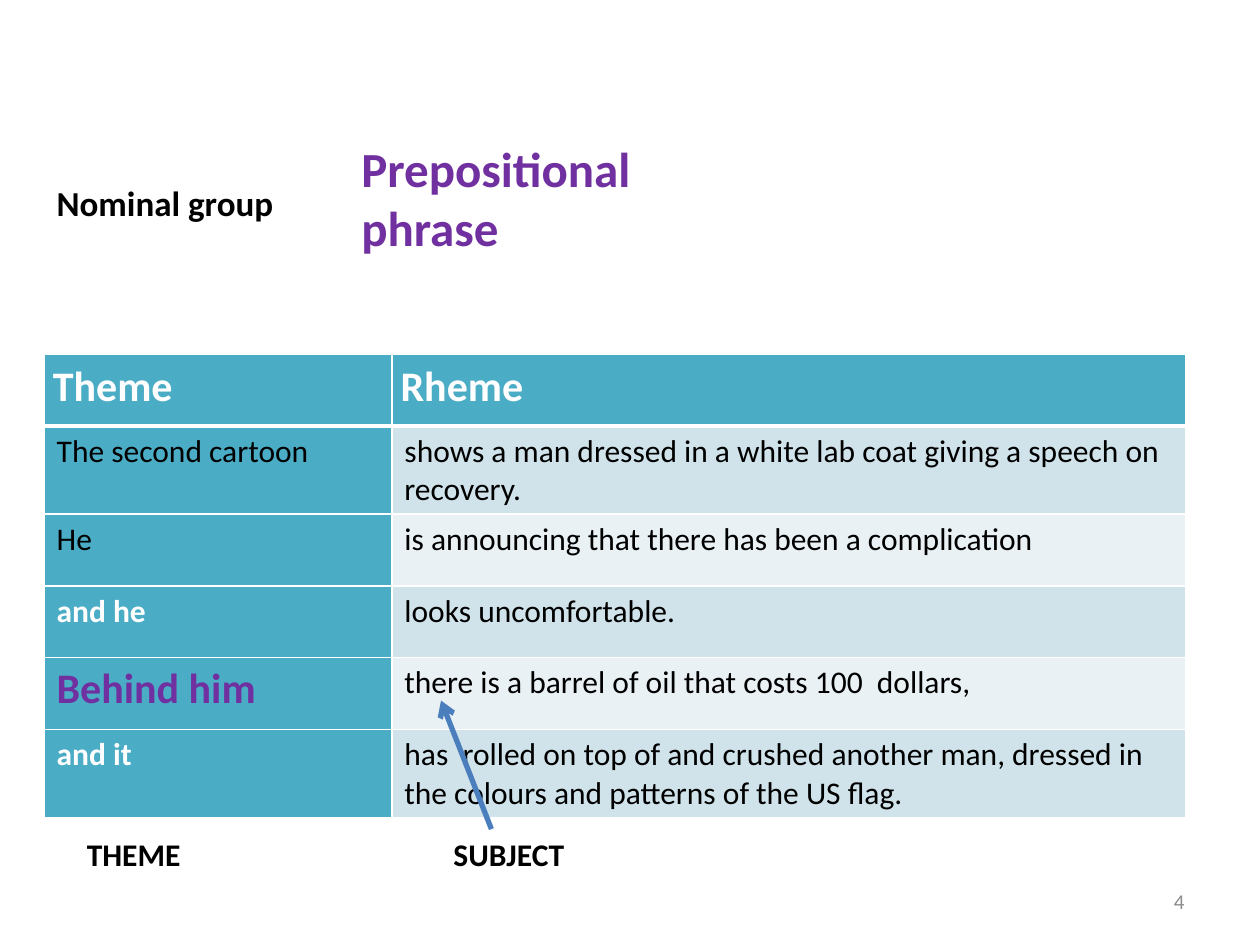
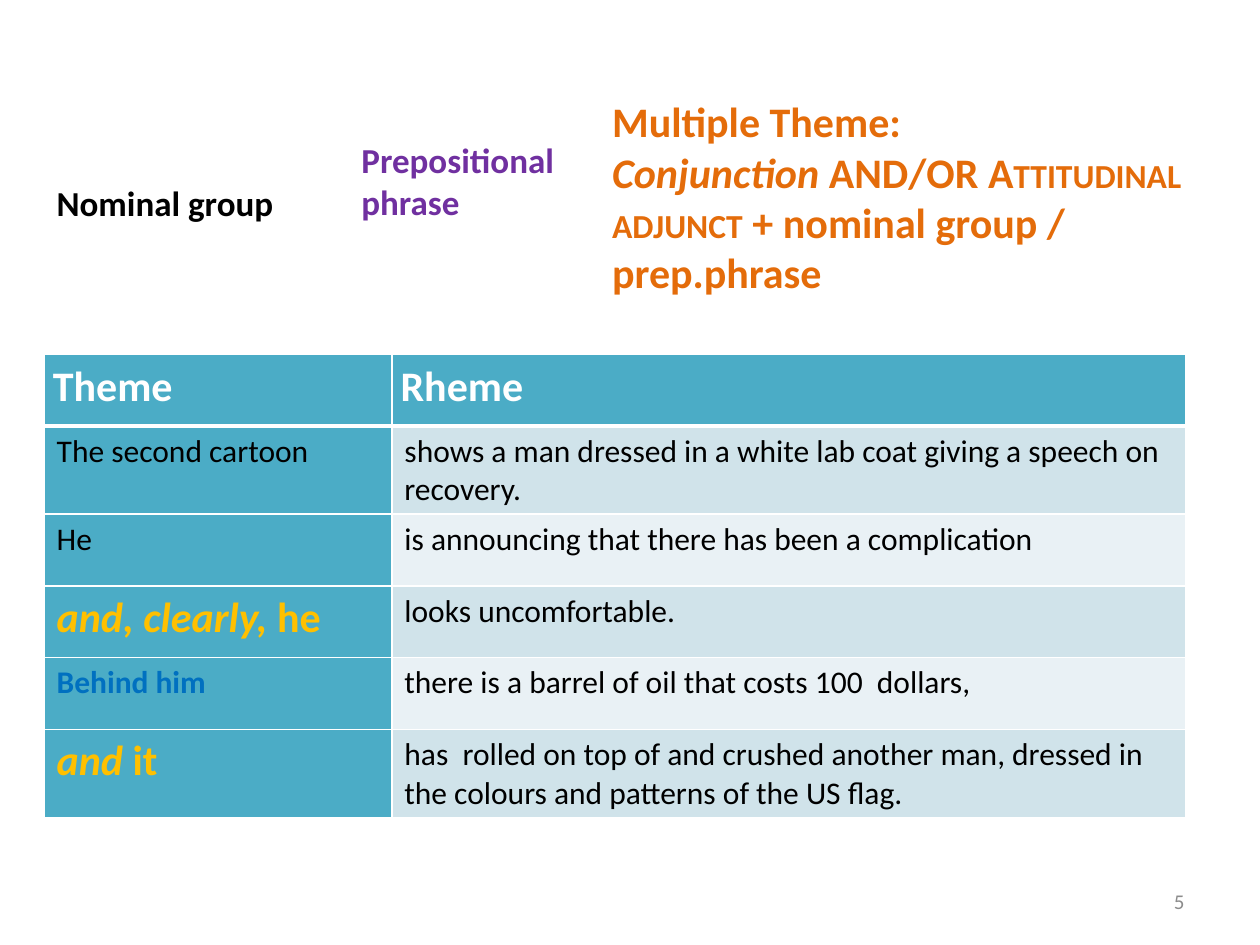
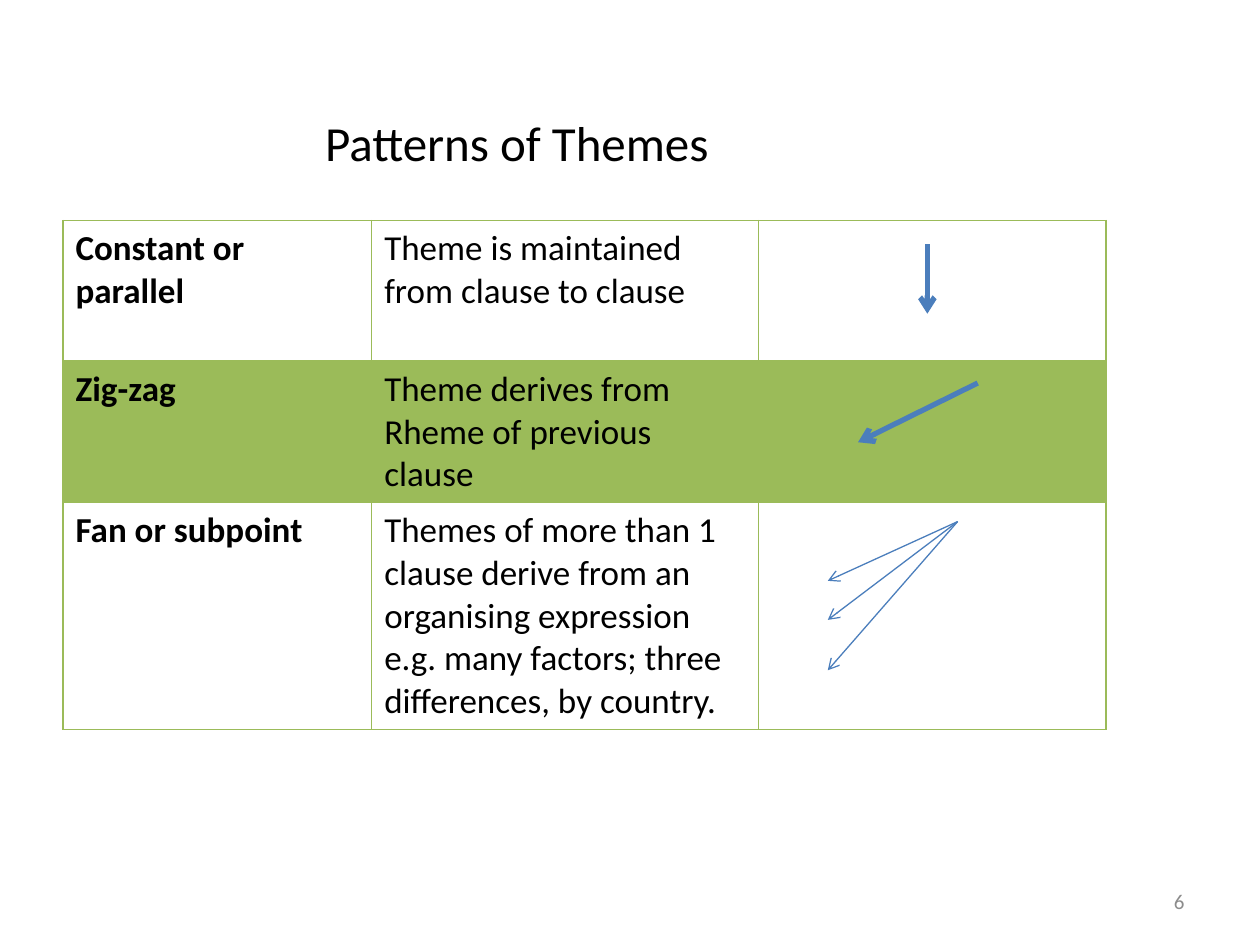
from dataclasses import dataclass
from typing import NamedTuple

from lxml import etree
from pptx import Presentation
from pptx.dml.color import RGBColor
from pptx.enum.shapes import MSO_CONNECTOR
from pptx.enum.text import MSO_ANCHOR, MSO_AUTO_SIZE, PP_ALIGN
from pptx.oxml.ns import qn
from pptx.util import Inches, Pt

LEFT, RIGHT, JUSTIFY = PP_ALIGN.LEFT, PP_ALIGN.RIGHT, PP_ALIGN.JUSTIFY
TOP, MIDDLE = MSO_ANCHOR.TOP, MSO_ANCHOR.MIDDLE
GROW, FIXED = MSO_AUTO_SIZE.SHAPE_TO_FIT_TEXT, MSO_AUTO_SIZE.NONE
STRAIGHT = MSO_CONNECTOR.STRAIGHT
FONT = "Calibri"
TITLE_ONLY, BLANK = 5, 6
COLORS = {
    "black": "000000",
    "white": "FFFFFF",
    "teal": "4BACC6",
    "mist": "D0E3EA",
    "pale": "E9F1F5",
    "green": "9BBB59",
    "purple": "7030A0",
    "orange": "E46C0A",
    "gold": "FFC000",
    "blue": "0070C0",
    "arrow": "4B7EBC",
    "gray": "8C8C8C",
}


class Run(NamedTuple):
    text: str
    italic: bool = False
    caps: bool = False


@dataclass
class Text:
    paras: list[list[Run]]
    size: float = 18
    color: str = "black"
    bold: bool = False
    align: PP_ALIGN = LEFT
    spacing: float | None = None


@dataclass
class Label:
    box: tuple[float, float, float, float]
    text: Text
    anchor: MSO_ANCHOR = TOP
    auto: MSO_AUTO_SIZE = GROW


class Arrow(NamedTuple):
    start: tuple[float, float]
    end: tuple[float, float]
    width: float = 3


def plain(*lines: str, **style) -> Text:
    return Text([[Run(line)] for line in lines], **style)


def rgb(name: str) -> RGBColor:
    return RGBColor.from_string(COLORS[name])


def write(frame, text: Text) -> None:
    for index, runs in enumerate(text.paras):
        para = frame.add_paragraph() if index else frame.paragraphs[0]
        para.alignment = text.align
        if text.spacing:
            para.line_spacing = text.spacing
        font = para.font
        font.name, font.size, font.bold = FONT, Pt(text.size), text.bold
        font.color.rgb = rgb(text.color)
        for part in runs:
            run = para.add_run()
            run.text = part.text
            if len(runs) > 1:
                run.font.italic = part.italic
            if part.caps:
                run.font._element.set("cap", "small")


def fit(shape, label: Label) -> None:
    shape.left, shape.top, shape.width, shape.height = map(Inches, label.box)
    frame = shape.text_frame
    frame.word_wrap = True
    frame.auto_size = label.auto
    frame.vertical_anchor = label.anchor
    write(frame, label.text)


def add_label(slide, label: Label) -> None:
    fit(slide.shapes.add_textbox(*map(Inches, label.box)), label)


def add_page(slide, number: int) -> None:
    text = plain(str(number), size=12, color="gray", align=RIGHT)
    add_label(slide, Label((7.17, 6.95, 2.33, 0.4), text, MIDDLE, FIXED))


def add_arrow(slide, arrow: Arrow) -> None:
    ends = map(Inches, arrow.start + arrow.end)
    link = slide.shapes.add_connector(STRAIGHT, *ends)
    link.line.color.rgb = rgb("arrow")
    link.line.width = Pt(arrow.width)
    props = link._element.spPr
    etree.SubElement(props.find(qn("a:ln")), qn("a:tailEnd"), type="arrow")
    etree.SubElement(props, qn("a:effectLst"))


def add_edges(cell, color: str, top: float, bottom: float) -> None:
    props = cell._tc.get_or_add_tcPr()
    widths = {"lnL": 1, "lnR": 1, "lnT": top, "lnB": bottom}
    for index, (side, width) in enumerate(widths.items()):
        line = etree.Element(qn(f"a:{side}"), w=str(Pt(width)))
        fill = etree.SubElement(line, qn("a:solidFill"))
        etree.SubElement(fill, qn("a:srgbClr"), val=COLORS[color])
        props.insert(index, line)


def paint(cell, color: str | None, alpha: int = 100) -> None:
    if color is None:
        cell.fill.background()
        return
    cell.fill.solid()
    cell.fill.fore_color.rgb = rgb(color)
    if alpha < 100:
        tone = cell._tc.tcPr.find(".//" + qn("a:srgbClr"))
        etree.SubElement(tone, qn("a:alpha"), val=str(alpha * 1000))


def add_grid(slide, spot: tuple[float, float], cols: list[float],
             rows: list[float], edge: str, rule: float):
    size = sum(cols), sum(rows)
    shape = slide.shapes.add_table(
        len(rows), len(cols), *map(Inches, spot + size))
    table = shape.table
    table.first_row = table.horz_banding = False
    for col, width in zip(table.columns, cols):
        col.width = Inches(width)
    for index, (row, height) in enumerate(zip(table.rows, rows)):
        row.height = Inches(height)
        for cell in row.cells:
            add_edges(cell, edge, rule if index == 1 else 1,
                      rule if index == 0 else 1)
    return table


RHEMES = [
    "shows a man dressed in a white lab coat giving a speech on recovery.",
    "is announcing that there has been a complication",
    "looks uncomfortable.",
    "there is a barrel of oil that costs 100  dollars,",
    "has  rolled on top of and crushed another man, dressed in the colours "
    "and patterns of the US flag.",
]
SHARED = [plain("The second cartoon"), plain("He")]


def add_clauses(slide, themes: list[Text]) -> None:
    table = add_grid(slide, (0.35, 2.81), [2.76, 6.3], [0.57] * 6, "white", 3)
    for col, head in enumerate(("Theme", "Rheme")):
        cell = table.cell(0, col)
        cell.margin_left = cell.margin_right = Inches(0.07)
        cell.margin_top = cell.margin_bottom = 0
        paint(cell, "teal")
        write(cell.text_frame, plain(head, size=24, color="white", bold=True,
                                     align=JUSTIFY, spacing=1.15))
    for row, (theme, rheme) in enumerate(zip(SHARED + themes, RHEMES), 1):
        left, right = table.cell(row, 0), table.cell(row, 1)
        paint(left, "teal")
        paint(right, "mist" if row % 2 else "pale")
        write(left.text_frame, theme)
        write(right.text_frame, plain(rheme))


def add_group(slide, size: float, width: float, height: float) -> None:
    add_label(slide, Label((0.35, 1.39, 2.05, 0.44),
                           plain("Nominal group", size=20, bold=True)))
    add_label(slide, Label((2.77, 1.05, width, height),
                           plain("Prepositional phrase", size=size,
                                 color="purple", bold=True)))


def add_phrase(deck) -> None:
    slide = deck.slides.add_slide(deck.slide_layouts[BLANK])
    add_group(slide, 28, 2.54, 1.04)
    add_clauses(slide, [
        plain("and he", color="white", bold=True),
        plain("Behind him", size=24, color="purple", bold=True),
        plain("and it", color="white", bold=True),
    ])
    add_page(slide, 4)
    add_arrow(slide, Arrow((3.9, 6.58), (3.5, 5.56)))
    for left, width, word in ((0.59, 2.28, "THEME"), (3.5, 2.05, "SUBJECT")):
        add_label(slide, Label((left, 6.58, width, 0.4),
                               plain(word, bold=True)))


def add_multi(deck) -> None:
    slide = deck.slides.add_slide(deck.slide_layouts[BLANK])
    add_group(slide, 20, 2.13, 0.77)
    note = Text([
        [Run("Multiple Theme:")],
        [Run("Conjunction", italic=True), Run(" AND/OR "),
         Run("Attitudinal adjunct", caps=True),
         Run(" + nominal group / prep.phrase")],
    ], 24, "orange", True)
    add_label(slide, Label((4.76, 0.71, 4.8, 1.72), note))
    add_clauses(slide, [
        Text([[Run("and, clearly,", True), Run(" he")]], 24, "gold", True),
        plain("Behind him", color="blue", bold=True),
        Text([[Run("and", True), Run(" it")]], 24, "gold", True),
    ])
    add_page(slide, 5)


PATTERNS = [
    ("Constant or parallel", ["Theme is maintained from clause to clause"]),
    ("Zig-zag", ["Theme derives from Rheme of previous clause"]),
    ("Fan or subpoint",
     ["Themes of more than 1 clause derive from an organising expression",
      "e.g. many factors; three differences, by country."]),
]


def add_patterns(deck) -> None:
    slide = deck.slides.add_slide(deck.slide_layouts[TITLE_ONLY])
    fit(slide.shapes.title, Label((2.48, 0.84, 4.33, 0.57),
                                  plain("Patterns of Themes", size=28)))
    table = add_grid(slide, (0.5, 1.75), [2.45, 3.07, 2.76],
                     [1.12, 1.12, 1.8], "green", 2)
    for row, (name, lines) in enumerate(PATTERNS):
        for cell in table.rows[row].cells:
            paint(cell, "green" if row == 1 else None, 20)
        write(table.cell(row, 0).text_frame, plain(name, size=20, bold=True))
        write(table.cell(row, 1).text_frame, plain(*lines, size=20))
    add_arrow(slide, Arrow((7.36, 1.94), (7.36, 2.49)))
    add_arrow(slide, Arrow((7.76, 3.04), (6.81, 3.51)))
    for level in (4.61, 4.92, 5.32):
        add_arrow(slide, Arrow((7.6, 4.14), (6.57, level), 0.75))
    add_page(slide, 6)


def main() -> None:
    deck = Presentation()
    deck.slide_width, deck.slide_height = Inches(10), Inches(7.5)
    add_phrase(deck)
    add_multi(deck)
    add_patterns(deck)
    deck.save("out.pptx")


if __name__ == "__main__":
    main()
